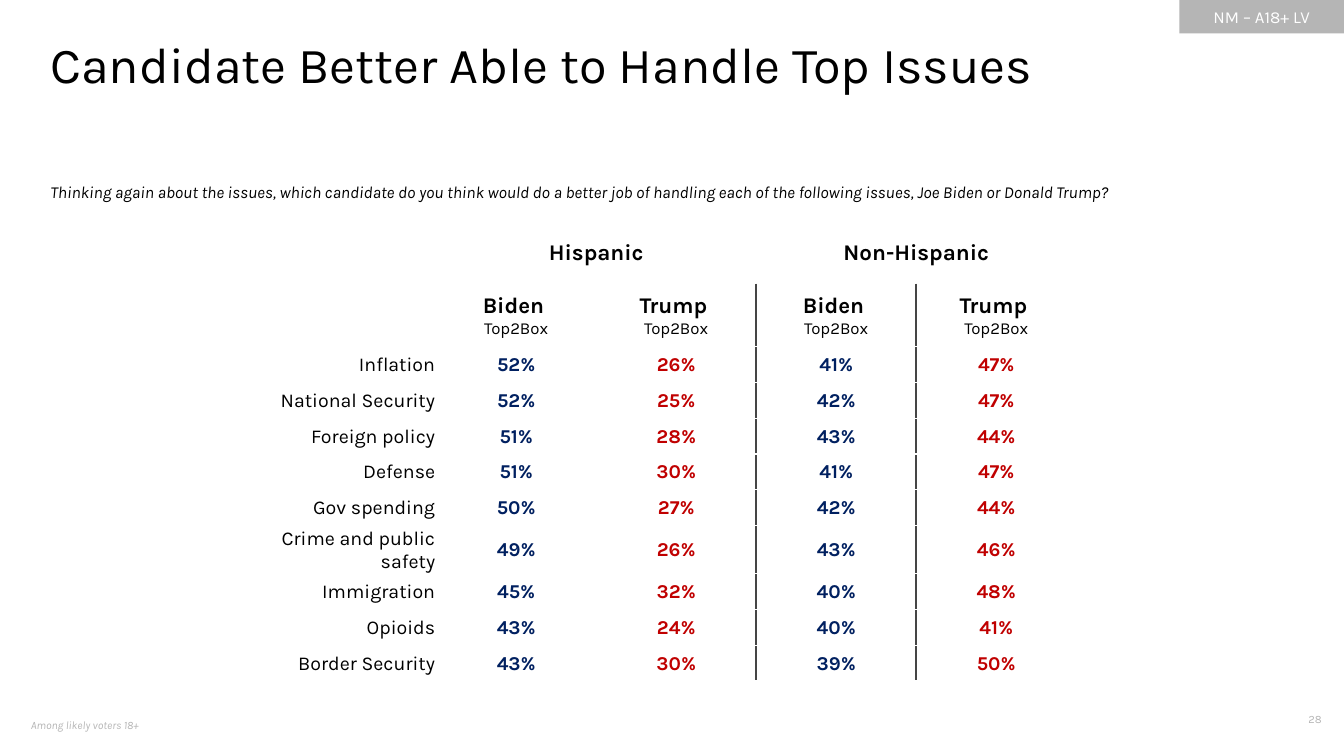
from lxml.etree import SubElement
from pptx import Presentation
from pptx.dml.color import RGBColor
from pptx.enum.shapes import MSO_SHAPE as Shape
from pptx.enum.text import MSO_ANCHOR as Anchor, PP_ALIGN as Align
from pptx.oxml import parse_xml
from pptx.oxml.ns import nsdecls, qn
from pptx.util import Pt

BLACK, GRAY, WHITE, RULE = "000000", "B5B5B5", "FFFFFF", "454545"
BIDEN, TRUMP = "002060", "C00000"
GROUPS = ["Hispanic", "Non-Hispanic"]
CANDIDATES = [("Biden ", BIDEN), ("Trump ", TRUMP)] * len(GROUPS)
ISSUES = [
    ("Inflation", 52, 26, 41, 47),
    ("National Security", 52, 25, 42, 47),
    ("Foreign policy", 51, 28, 43, 44),
    ("Defense", 51, 30, 41, 47),
    ("Gov spending", 50, 27, 42, 44),
    ("Crime and public safety", 49, 26, 43, 46),
    ("Immigration", 45, 32, 40, 48),
    ("Opioids", 43, 24, 40, 41),
    ("Border Security", 43, 30, 39, 50),
]
QUESTION = (
    "Thinking again about the issues, which candidate do you think would do a better job "
    "of handling each of the following issues, Joe Biden or Donald Trump?"
)


def color(code):
    return RGBColor.from_string(code)


class PollSlide:
    """Draws the elements of one poll slide in a shared style."""

    font = "Karla"

    def __init__(self, deck):
        self.slide = deck.slides.add_slide(deck.slide_layouts[6])

    def add_words(self, paragraph, words, size, ink=BLACK, align=Align.LEFT, bold=False, italic=False):
        paragraph.alignment = align
        run = paragraph.add_run()
        run.text = words
        run.font.name, run.font.size = self.font, Pt(size)
        run.font.bold, run.font.italic = bold, italic
        run.font.color.rgb = color(ink)

    def add_text(self, place, words, size, inset=True, **style):
        frame = self.slide.shapes.add_textbox(*map(Pt, place)).text_frame
        frame.word_wrap = True
        if not inset:
            frame.margin_left = frame.margin_right = frame.margin_top = frame.margin_bottom = 0
        self.add_words(frame.paragraphs[0], words, size, **style)

    def add_tag(self, place, words, fill):
        label = self.slide.shapes.add_shape(Shape.RECTANGLE, *map(Pt, place))
        label.shadow.inherit = False
        label.fill.solid()
        label.fill.fore_color.rgb = color(fill)
        label.line.fill.background()
        label.text_frame.vertical_anchor = Anchor.MIDDLE
        self.add_words(label.text_frame.paragraphs[0], words, 12, WHITE, Align.CENTER)

    def add_grid(self, place, widths, heights):
        grid = self.slide.shapes.add_table(len(heights), len(widths), *map(Pt, place)).table
        grid.first_row = grid.horz_banding = False
        for column, width in zip(grid.columns, widths):
            column.width = Pt(width)
        for row, height in zip(grid.rows, heights):
            row.height = Pt(height)
            for cell in row.cells:
                cell.fill.background()
                cell.vertical_anchor = Anchor.MIDDLE
        return grid

    def fill_cell(self, cell, words, **style):
        cell.margin_left = cell.margin_right = cell.margin_top = Pt(0.75)
        cell.margin_bottom = 0
        self.add_words(cell.text_frame.paragraphs[0], words, 14, **style)

    def add_border(self, cell, side):
        edge = parse_xml(f'<a:{side} {nsdecls("a")} w="{Pt(1.5)}"/>')
        fill = SubElement(edge, qn("a:solidFill"))
        SubElement(fill, qn("a:srgbClr")).set("val", RULE)
        cell._tc.get_or_add_tcPr().insert(0, edge)


def main():
    deck = Presentation()
    deck.slide_width, deck.slide_height = Pt(960), Pt(540)
    poll = PollSlide(deck)

    poll.add_tag((842.4, 0, 117.6, 23.8), "NM – A18+ LV", GRAY)
    poll.add_text((15, 509.8, 368, 19.4), "Among likely voters 18+", 8, ink=GRAY, italic=True)
    poll.add_text((887.8, 505.4, 63.4, 19.4), "28", 8, ink=GRAY, align=Align.RIGHT)
    poll.add_text((36, 24, 864, 44), "Candidate Better Able to Handle Top Issues", 36, inset=False)
    poll.add_text((36, 129.6, 793, 14.4), QUESTION, 12, inset=False, italic=True)

    widths = [144] + [114.3] * len(CANDIDATES)
    heights = [44.64] * 2 + [25.55] * len(ISSUES)
    scores = poll.add_grid((167.6, 158.4, sum(widths), sum(heights)), widths, heights)

    for index, group in enumerate(GROUPS):
        heading = scores.cell(0, 1 + 2 * index)
        heading.merge(scores.cell(0, 2 + 2 * index))
        poll.add_words(heading.text_frame.paragraphs[0], group, 16, align=Align.CENTER, bold=True)

    for column, (candidate, _) in enumerate(CANDIDATES, 1):
        frame = scores.cell(1, column).text_frame
        poll.add_words(frame.paragraphs[0], candidate, 16, align=Align.CENTER, bold=True)
        poll.add_words(frame.add_paragraph(), "Top2Box", 12, align=Align.CENTER)

    for row, (issue, *shares) in enumerate(ISSUES, 2):
        poll.fill_cell(scores.cell(row, 0), issue, align=Align.RIGHT)
        for column, (share, (_, ink)) in enumerate(zip(shares, CANDIDATES), 1):
            poll.fill_cell(scores.cell(row, column), f"{share}%", ink=ink, align=Align.CENTER, bold=True)

    for row in range(1, len(heights)):
        poll.add_border(scores.cell(row, 2), "lnR")
        poll.add_border(scores.cell(row, 3), "lnL")

    deck.save("out.pptx")


if __name__ == "__main__":
    main()
